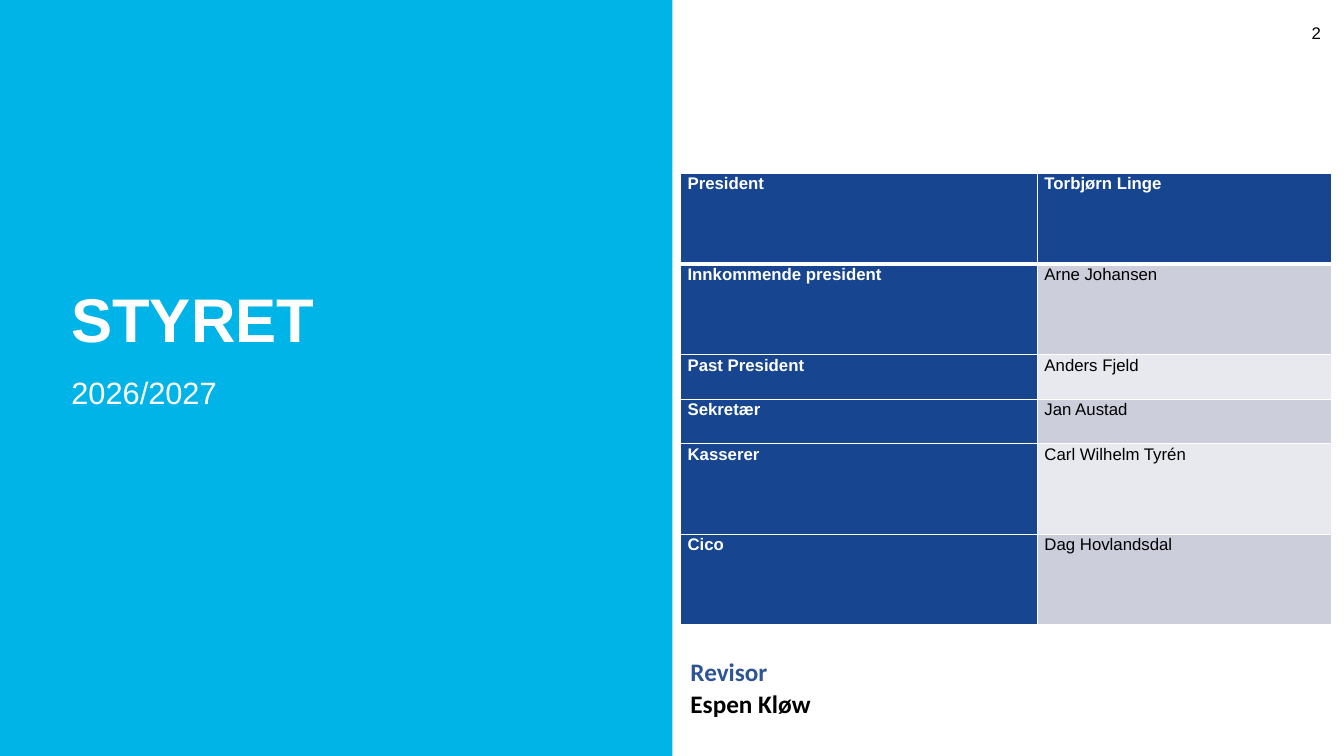
from pptx import Presentation
from pptx.dml.color import RGBColor
from pptx.enum.shapes import MSO_SHAPE
from pptx.enum.text import MSO_ANCHOR, PP_ALIGN
from pptx.oxml import parse_xml
from pptx.oxml.ns import nsdecls
from pptx.util import Inches, Pt

WHITE = RGBColor(0xFF, 0xFF, 0xFF)
BLACK = RGBColor(0x00, 0x00, 0x00)
SKY = RGBColor(0x01, 0xB4, 0xE7)
NAVY = RGBColor(0x17, 0x45, 0x8F)
BLUE = RGBColor(0x2F, 0x54, 0x96)
BAND_DARK = RGBColor(0xCC, 0xCF, 0xDB)
BAND_LIGHT = RGBColor(0xE8, 0xE9, 0xEE)

BOARD = [
    ("President", "Torbjørn Linge", 0.9),
    ("Innkommende president", "Arne Johansen", 0.9),
    ("Past President", "Anders Fjeld", 0.44),
    ("Sekretær", "Jan Austad", 0.44),
    ("Kasserer", "Carl Wilhelm Tyrén", 0.9),
    ("Cico", "Dag Hovlandsdal", 0.9),
]


def write(p, text, size, color, bold=False, font="Arial", spacing=None):
    p.text = text
    p.line_spacing = spacing
    f = p.runs[0].font
    f.name, f.size, f.bold = font, Pt(size), bold
    f.color.rgb = color


def add_text_frame(x, y, w, h, anchor=MSO_ANCHOR.TOP):
    tf = s.shapes.add_textbox(Inches(x), Inches(y), Inches(w), Inches(h)).text_frame
    tf.word_wrap = True
    tf.vertical_anchor = anchor
    return tf


prs = Presentation()
prs.slide_width, prs.slide_height = Inches(13.33), Inches(7.5)
s = prs.slides.add_slide(prs.slide_layouts[6])

# Left panel with title
panel = s.shapes.add_shape(MSO_SHAPE.RECTANGLE, 0, 0, Inches(6.67), prs.slide_height)
panel.shadow.inherit = False
panel.fill.solid()
panel.fill.fore_color.rgb = SKY
panel.line.fill.background()

tf = add_text_frame(0.61, 2.34, 5.44, 1.24, MSO_ANCHOR.BOTTOM)
write(tf.paragraphs[0], "STYRET", 44, WHITE, bold=True, spacing=0.9)
tf = add_text_frame(0.61, 3.7, 5.98, 2.16)
write(tf.paragraphs[0], "2026/2027", 22, WHITE, spacing=0.9)

# Slide number
tf = add_text_frame(12.74, 0.13, 0.46, 0.4, MSO_ANCHOR.MIDDLE)
write(tf.paragraphs[0], "2", 12, BLACK)
tf.paragraphs[0].alignment = PP_ALIGN.RIGHT

# Board members
table = s.shapes.add_table(len(BOARD), 2, Inches(6.75), Inches(1.72),
                           Inches(6.46), Inches(4.48)).table
table.columns[0].width = Inches(3.54)
table.columns[1].width = Inches(2.92)
for i, (role, name, height) in enumerate(BOARD):
    table.rows[i].height = Inches(height)
    for j, text in enumerate((role, name)):
        cell = table.cell(i, j)
        cell.margin_left = cell.margin_right = Inches(0.07)
        cell.margin_top = cell.margin_bottom = 0
        heading = i == 0 or j == 0
        p = cell.text_frame.paragraphs[0]
        write(p, text, 12, WHITE if heading else BLACK, bold=heading, spacing=1.07)
        p.space_after = Pt(8)
        widths = {"lnL": 1, "lnR": 1, "lnT": 3 if i == 1 else 1, "lnB": 3 if i == 0 else 1}
        for tag, width in widths.items():
            cell._tc.get_or_add_tcPr().append(parse_xml(
                f'<a:{tag} {nsdecls("a")} w="{Pt(width)}"><a:solidFill>'
                f'<a:srgbClr val="{WHITE}"/></a:solidFill></a:{tag}>'))
        cell.fill.solid()
        cell.fill.fore_color.rgb = NAVY if heading else BAND_DARK if i % 2 else BAND_LIGHT

# Auditor
tf = add_text_frame(6.75, 6.44, 1.67, 0.73)
write(tf.paragraphs[0], "Revisor", 18, BLUE, bold=True, font="Calibri", spacing=1.07)
p = tf.add_paragraph()
write(p, "Espen Kløw", 18, BLACK, bold=True, font="Calibri", spacing=1.07)
p.space_after = Pt(8)

prs.save("out.pptx")
